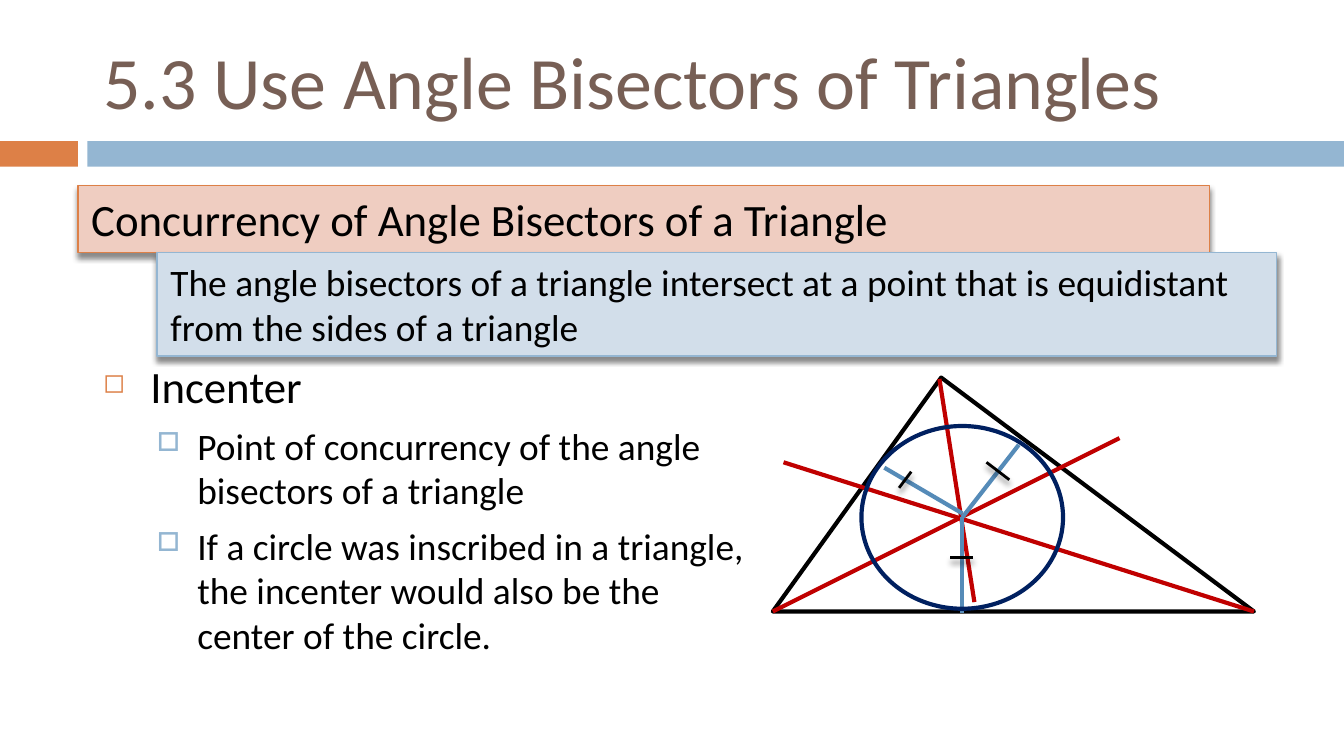
from dataclasses import dataclass

from lxml.etree import SubElement
from pptx import Presentation
from pptx.dml.color import RGBColor
from pptx.enum.shapes import MSO_CONNECTOR, MSO_SHAPE
from pptx.enum.text import MSO_ANCHOR, PP_ALIGN
from pptx.oxml.ns import qn
from pptx.util import Inches, Pt


@dataclass(frozen=True)
class Theme:
    font: str = "Calibri"
    brown: str = "775F55"
    orange: str = "DD8047"
    blue: str = "94B6D2"
    peach: str = "EFCDC1"
    pale: str = "D2DEEA"
    red: str = "C00000"
    steel: str = "558BB8"
    navy: str = "002060"
    black: str = "000000"
    white: str = "FFFFFF"
    title: float = 39.6
    head: float = 24
    body: float = 20
    thin: float = 0.79
    tick: float = 1.5
    thick: float = 2.25


THEME = Theme()


def color(code):
    return RGBColor.from_string(code)


def write(frame, text, size=THEME.body, ink=THEME.black, first=True,
          anchor=MSO_ANCHOR.TOP, before=0, left=0, hang=0, level=0, bullet=None):
    frame.word_wrap = True
    frame.vertical_anchor = anchor
    para = frame.paragraphs[0] if first else frame.add_paragraph()
    para.alignment = PP_ALIGN.LEFT
    para.level = level
    para.space_before = Pt(before)
    run = para.add_run()
    run.text = text
    run.font.name = THEME.font
    run.font.size = Pt(size)
    run.font.color.rgb = color(ink)
    if bullet:
        mark, tint, scale = bullet
        props = para._p.get_or_add_pPr()
        props.set("marL", str(Inches(left)))
        props.set("indent", str(-Inches(hang)))
        tone = SubElement(props, qn("a:buClr"))
        SubElement(tone, qn("a:srgbClr"), val=tint)
        SubElement(props, qn("a:buSzPct"), val=str(scale * 1000))
        SubElement(props, qn("a:buChar"), char=mark)


def shade(item, show):
    effects = SubElement(item._element.spPr, qn("a:effectLst"))
    if show:
        cast = SubElement(effects, qn("a:outerShdw"), blurRad=str(Pt(3)),
                          dist=str(Pt(2.4)), dir="5400000", rotWithShape="0")
        tint = SubElement(cast, qn("a:srgbClr"), val=THEME.black)
        SubElement(tint, qn("a:alpha"), val="45000")


def shape(slide, kind, box, fill=None, line=None, width=THEME.thick, shadow=False):
    item = slide.shapes.add_shape(kind, *map(Inches, box))
    if fill:
        item.fill.solid()
        item.fill.fore_color.rgb = color(fill)
    else:
        item.fill.background()
    if line:
        item.line.color.rgb = color(line)
        item.line.width = Pt(width)
    else:
        item.line.fill.background()
    shade(item, shadow)
    return item


def stroke(slide, start, end, ink, width=THEME.thick, shadow=False):
    item = slide.shapes.add_connector(
        MSO_CONNECTOR.STRAIGHT, *map(Inches, (*start, *end)))
    item.line.color.rgb = color(ink)
    item.line.width = Pt(width)
    shade(item, shadow)


def band(slide, box):
    x, y, w, h = box
    for left, wide, fill in ((0, 0.58, THEME.orange), (0.65, w - 0.65, THEME.blue)):
        shape(slide, MSO_SHAPE.RECTANGLE, (x + left, y, wide, h), fill)


def title(slide, box):
    frame = slide.shapes.add_textbox(*map(Inches, box)).text_frame
    write(frame, "5.3 Use Angle Bisectors of Triangles", size=THEME.title,
          ink=THEME.brown, anchor=MSO_ANCHOR.MIDDLE)


def notes(slide, box):
    frame = slide.shapes.add_textbox(*map(Inches, box)).text_frame
    write(frame, "Incenter", size=THEME.head, before=7, left=0.35, hang=0.35,
          bullet=("◻", THEME.orange, 60))
    for text in (
        "Point of concurrency of the angle bisectors of a triangle",
        "If a circle was inscribed in a triangle, the incenter would also be "
        "the center of the circle.",
    ):
        write(frame, text, first=False, before=5.5, left=0.7, hang=0.3, level=1,
              bullet=("□", THEME.blue, 70))


def theorem(slide, box):
    x, y, w, h = box
    top = 0.5
    rows = (
        ((x, y, w - 0.5, top), THEME.peach, THEME.orange, THEME.head,
         "Concurrency of Angle Bisectors of a Triangle"),
        ((x + 0.59, y + top, w - 0.59, h - top), THEME.pale, THEME.blue, THEME.body,
         "The angle bisectors of a triangle intersect at a point that is "
         "equidistant from the sides of a triangle"),
    )
    for place, fill, line, size, text in rows:
        card = shape(slide, MSO_SHAPE.RECTANGLE, place, fill, line, THEME.thin, True)
        write(card.text_frame, text, size=size)


def figure(slide, box):
    x, y, w, h = box

    def at(dx, dy):
        return x + dx, y + dy

    outer = shape(slide, MSO_SHAPE.ISOSCELES_TRIANGLE, box, THEME.white, THEME.black)
    outer.adjustments[0] = 0.35
    for start, end in (
        ((w, h), (0.08, 0.63)),
        ((1.24, 0.01), (1.5, 1.67)),
        ((0, h), (2.58, 0.45)),
    ):
        stroke(slide, at(*start), at(*end), THEME.red)
    for start, end in (
        ((1.41, 1.01), (0.83, 0.67)),
        ((1.83, 0.5), (1.41, 1.04)),
        ((1.41, 1.04), (1.41, 1.75)),
    ):
        stroke(slide, at(*start), at(*end), THEME.steel)
    for start, end in (
        ((0.94, 0.82), (1.03, 0.7)),
        ((1.32, 1.34), (1.49, 1.34)),
        ((1.59, 0.63), (1.76, 0.76)),
    ):
        stroke(slide, at(*start), at(*end), THEME.black, THEME.tick, True)
    shape(slide, MSO_SHAPE.OVAL, (*at(0.66, 0.36), 1.5, 1.36), line=THEME.navy)


def main():
    deck = Presentation()
    deck.slide_width = Inches(10)
    deck.slide_height = deck.slide_width * 9 // 16
    slide = deck.slides.add_slide(deck.slide_layouts[6])
    band(slide, (0, 1.05, 10, 0.19))
    title(slide, (0.67, 0.19, 8.92, 0.81))
    notes(slide, (0.67, 2.62, 5, 2.81))
    theorem(slide, (0.58, 1.38, 8.92, 1.27))
    figure(slide, (5.75, 2.81, 3.58, 1.74))
    deck.save("out.pptx")


if __name__ == "__main__":
    main()
